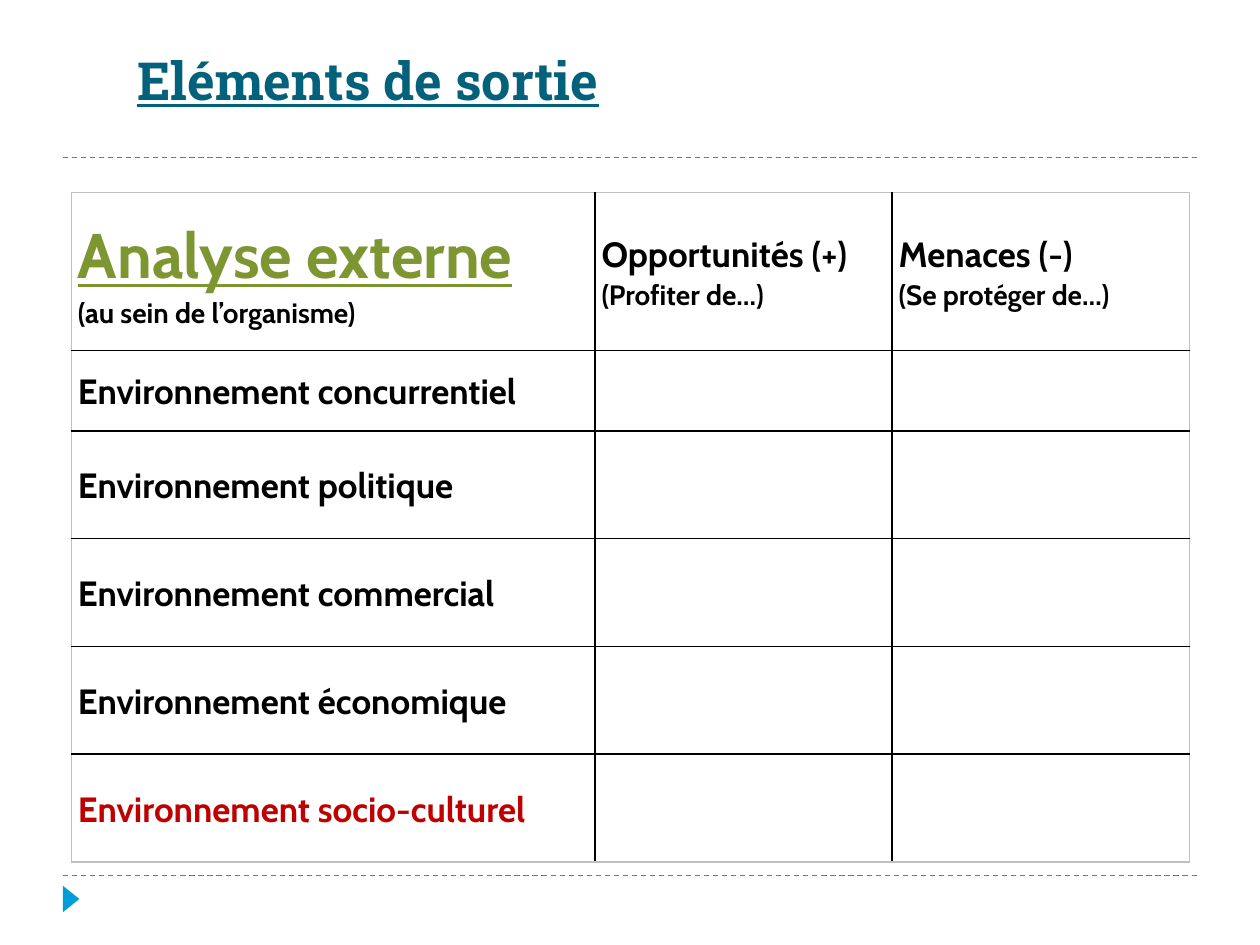
from dataclasses import dataclass

from lxml import etree
from pptx import Presentation
from pptx.dml.color import RGBColor
from pptx.enum.dml import MSO_LINE
from pptx.enum.shapes import MSO_CONNECTOR, MSO_SHAPE
from pptx.enum.text import MSO_ANCHOR
from pptx.oxml.ns import qn
from pptx.util import Pt

STRAIGHT = MSO_CONNECTOR.STRAIGHT
TRIANGLE = MSO_SHAPE.ISOSCELES_TRIANGLE
DASH = MSO_LINE.DASH
MIDDLE = MSO_ANCHOR.MIDDLE


@dataclass(frozen=True)
class Theme:
    title_font: str = "Roboto Slab"
    body_font: str = "Cabin"
    title: str = "04617B"
    accent: str = "009DD9"
    heading: str = "7E9632"
    alert: str = "C00000"
    ink: str = "000000"
    paper: str = "FFFFFF"
    frame: str = "BFBFBF"
    title_size: float = 30
    heading_size: float = 36
    label_size: float = 20
    note_size: float = 16
    rule_width: float = 0.75
    border_width: float = 1
    spacing: float = 1.07


class SlideBuilder:
    def __init__(self, slide, theme):
        self.s = slide
        self.theme = theme

    def run(self, p, text, size, color, font, underline=False):
        r = p.add_run()
        r.text = text
        fmt = {"name": font, "size": Pt(size), "bold": True, "underline": underline}
        for key, value in fmt.items():
            setattr(r.font, key, value)
        r.font.color.rgb = RGBColor.from_string(color)

    def title(self, text, x, y, w, h):
        t = self.theme
        tf = self.s.shapes.add_textbox(Pt(x), Pt(y), Pt(w), Pt(h)).text_frame
        fmt = {"word_wrap": True, "vertical_anchor": MIDDLE,
               "margin_left": Pt(5), "margin_right": Pt(5),
               "margin_top": Pt(3), "margin_bottom": Pt(3)}
        for key, value in fmt.items():
            setattr(tf, key, value)
        self.run(tf.paragraphs[0], text, t.title_size, t.title, t.title_font, True)

    def dashed_rule(self, x1, x2, y):
        sp = self.s.shapes.add_connector(STRAIGHT, Pt(x1), Pt(y), Pt(x2), Pt(y))
        sp.line.color.rgb = RGBColor.from_string(self.theme.accent)
        sp.line.width = Pt(self.theme.rule_width)
        sp.line.dash_style = DASH
        etree.SubElement(sp._element.spPr, qn("a:effectLst"))

    def marker(self, x, y, w, h):
        sp = self.s.shapes.add_shape(TRIANGLE, Pt(x), Pt(y), Pt(w), Pt(h))
        sp.rotation = 90
        sp.shadow.inherit = False
        sp.fill.solid()
        sp.fill.fore_color.rgb = RGBColor.from_string(self.theme.accent)
        sp.line.fill.background()

    def borders(self, cell, colors):
        """Draw the four sides; colors maps L, R, T and B to a colour."""
        tc_pr = cell._tc.get_or_add_tcPr()
        for i, side in enumerate("LRTB"):
            ln = etree.Element(qn(f"a:ln{side}"), w=str(Pt(self.theme.border_width)))
            fill = etree.SubElement(ln, qn("a:solidFill"))
            etree.SubElement(fill, qn("a:srgbClr"), val=colors[side])
            tc_pr.insert(i, ln)

    def cell(self, cell, lines):
        t = self.theme
        fmt = {"vertical_anchor": MIDDLE, "margin_left": Pt(3.75),
               "margin_right": Pt(3.75), "margin_top": 0, "margin_bottom": 0}
        for key, value in fmt.items():
            setattr(cell, key, value)
        cell.fill.solid()
        cell.fill.fore_color.rgb = RGBColor.from_string(t.paper)
        tf = cell.text_frame
        for i, (text, size, color, underline) in enumerate(lines):
            p = tf.add_paragraph() if i else tf.paragraphs[0]
            p.line_spacing = t.spacing
            self.run(p, text, size, color, t.body_font, underline)

    def table(self, x, y, widths, heights, content):
        """Fill a grid; content maps (row, column) to the lines of a cell."""
        t = self.theme
        n_rows, n_cols = len(heights), len(widths)
        table = self.s.shapes.add_table(n_rows, n_cols, Pt(x), Pt(y),
                                        Pt(sum(widths)), Pt(sum(heights))).table
        table.first_row = table.horz_banding = False
        for col, width in zip(table.columns, widths):
            col.width = Pt(width)
        for row, height in zip(table.rows, heights):
            row.height = Pt(height)
        for i in range(n_rows):
            for j in range(n_cols):
                cell = table.cell(i, j)
                self.cell(cell, content.get((i, j), []))
                outer = {"L": j == 0, "R": j == n_cols - 1,
                         "T": i == 0, "B": i == n_rows - 1}
                self.borders(cell, {side: t.frame if edge else t.ink
                                    for side, edge in outer.items()})


def main():
    prs = Presentation()
    prs.slide_width, prs.slide_height = Pt(720), Pt(540)
    t = Theme()
    slide = SlideBuilder(prs.slides.add_slide(prs.slide_layouts[6]), t)

    for y in (500.4, 90):
        slide.dashed_rule(36, 684, y)
    slide.marker(33.1, 509, 15.1, 9.4)
    slide.title("Eléments de sortie", 73.4, 23.8, 574.6, 43.2)

    headers = [
        ("Analyse externe", "(au sein de l’organisme)", t.heading_size, t.heading, True),
        ("Opportunités (+)", "(Profiter de…)", t.label_size, t.ink, False),
        ("Menaces (-)", "(Se protéger de…)", t.label_size, t.ink, False),
    ]
    environments = ["concurrentiel", "politique", "commercial", "économique",
                    "socio-culturel"]
    content = {(0, j): [(head, size, color, underline),
                        (note, t.note_size, t.ink, False)]
               for j, (head, note, size, color, underline) in enumerate(headers)}
    for i, name in enumerate(environments, start=1):
        color = t.alert if i == len(environments) else t.ink
        content[i, 0] = [(f"Environnement {name}", t.label_size, color, False)]

    slide.table(40.8, 110, [299.2, 169.8, 169.8], [90.4, 45.8] + [61.6] * 4, content)
    prs.save("out.pptx")


if __name__ == "__main__":
    main()
